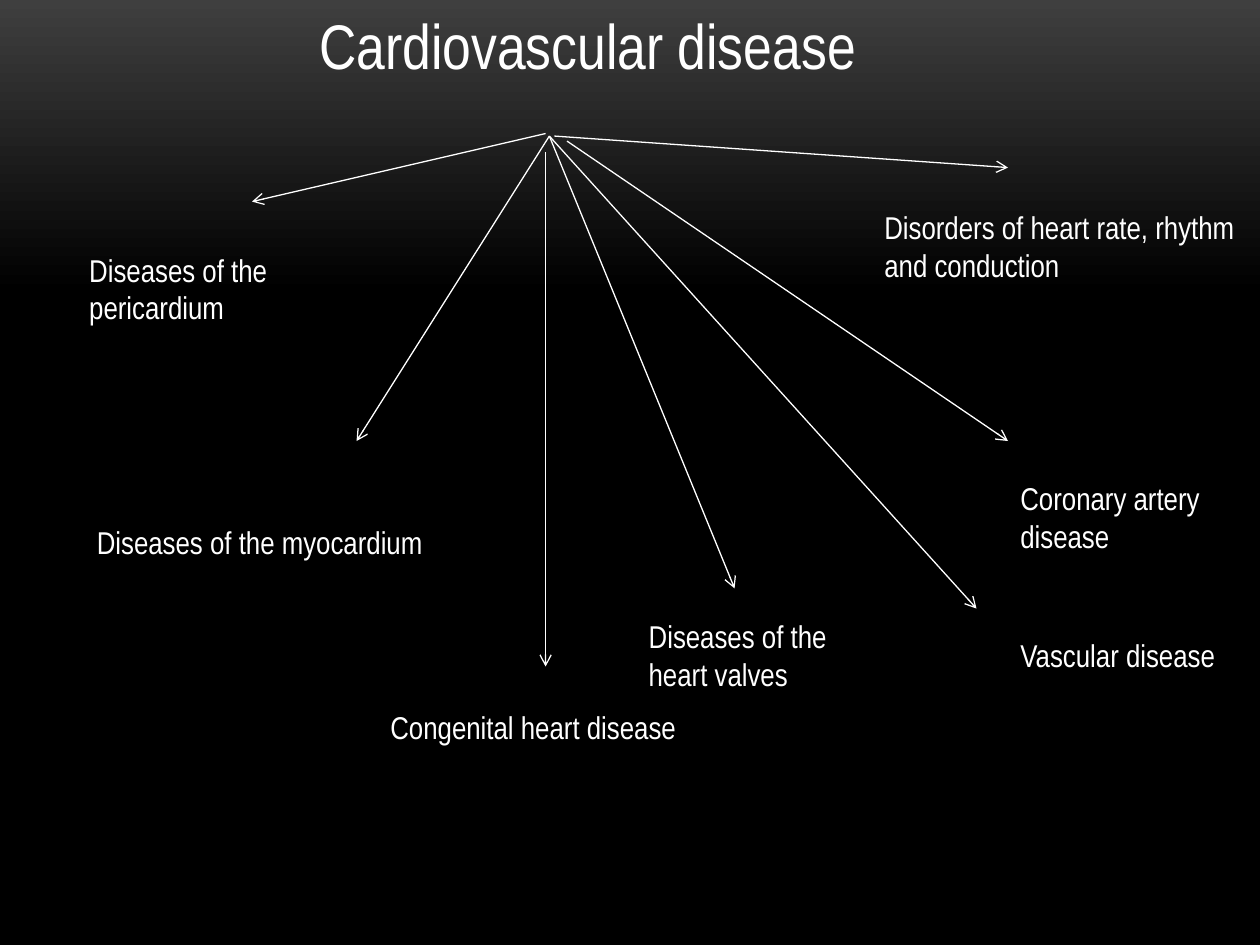
from copy import deepcopy

from lxml import etree
from pptx import Presentation
from pptx import util as u
from pptx.dml.color import RGBColor
from pptx.enum import shapes, text
from pptx.oxml.ns import qn

WHITE = "FFFFFF"
FONT = "Arial Narrow"

# Start and end of each arrow
ARROWS = [
    ((4.4, 1.08), (8, 1.33)),
    ((4.5, 1.12), (8, 3.5)),
    ((4.33, 1.21), (4.33, 5.29)),
    ((4.33, 1.06), (2, 1.6)),
    ((4.36, 1.08), (2.83, 3.5)),
    ((4.36, 1.08), (5.83, 4.67)),
    ((4.36, 1.08), (7.75, 4.83)),
]

# Disease groups with their boxes: left, top, width, height
GROUPS = [
    ("Disorders of heart rate, rhythm and conduction", (6.92, 1.6, 3.08, 0.71)),
    ("Coronary artery disease", (8, 3.75, 2, 0.71)),
    ("Vascular disease", (8, 5, 1.83, 0.4)),
    ("Diseases of the heart valves", (5.05, 4.85, 2, 0.71)),
    ("Congenital heart disease", (3, 5.57, 2.67, 0.4)),
    ("Diseases of the myocardium", (0.67, 4.1, 3.33, 0.4)),
    ("Diseases of the pericardium", (0.61, 1.94, 2.54, 0.71)),
]


def color(value):
    return RGBColor.from_string(value)


def inches(values):
    return [u.Inches(v) for v in values]


def add_background(s):
    fill = s.background.fill
    fill.gradient()
    fill.gradient_angle = 270
    stop_list = s.element.find(".//" + qn("a:gsLst"))
    stop_list.append(deepcopy(stop_list[-1]))
    stops = [(0, "3F3F3F"), (0.31, "000000"), (1, "000000")]
    for stop, (position, value) in zip(fill.gradient_stops, stops):
        stop.position = position
        stop.color.rgb = color(value)


def add_label(s, wording, box, size=18, align=None):
    tf = s.shapes.add_textbox(*inches(box)).text_frame
    tf.word_wrap = True
    tf.auto_size = text.MSO_AUTO_SIZE.SHAPE_TO_FIT_TEXT
    p = tf.paragraphs[0]
    p.alignment = align
    r = p.add_run()
    r.text = wording
    for name, value in {"name": FONT, "size": u.Pt(size)}.items():
        setattr(r.font, name, value)
    r.font.color.rgb = color(WHITE)


def add_arrow(s, start, end):
    line = s.shapes.add_connector(
        shapes.MSO_CONNECTOR.STRAIGHT, *inches(start + end))
    line.line.width = u.Pt(0.75)
    line.line.color.rgb = color(WHITE)
    props = line.element.spPr
    # Open arrowhead at the end, no shadow
    etree.SubElement(props.find(qn("a:ln")), qn("a:tailEnd"), type="arrow")
    etree.SubElement(props, qn("a:effectLst"))


def main():
    prs = Presentation()
    prs.slide_width, prs.slide_height = inches((10, 7.5))
    s = prs.slides.add_slide(prs.slide_layouts[6])
    add_background(s)

    # Title
    add_label(s, "Cardiovascular disease", (1.58, 0, 6.17, 0.71),
              size=36, align=text.PP_ALIGN.CENTER)

    # Arrows fanning out from the title
    for start, end in ARROWS:
        add_arrow(s, start, end)

    # Disease groups
    for wording, box in GROUPS:
        add_label(s, wording, box)

    prs.save("out.pptx")


if __name__ == "__main__":
    main()
